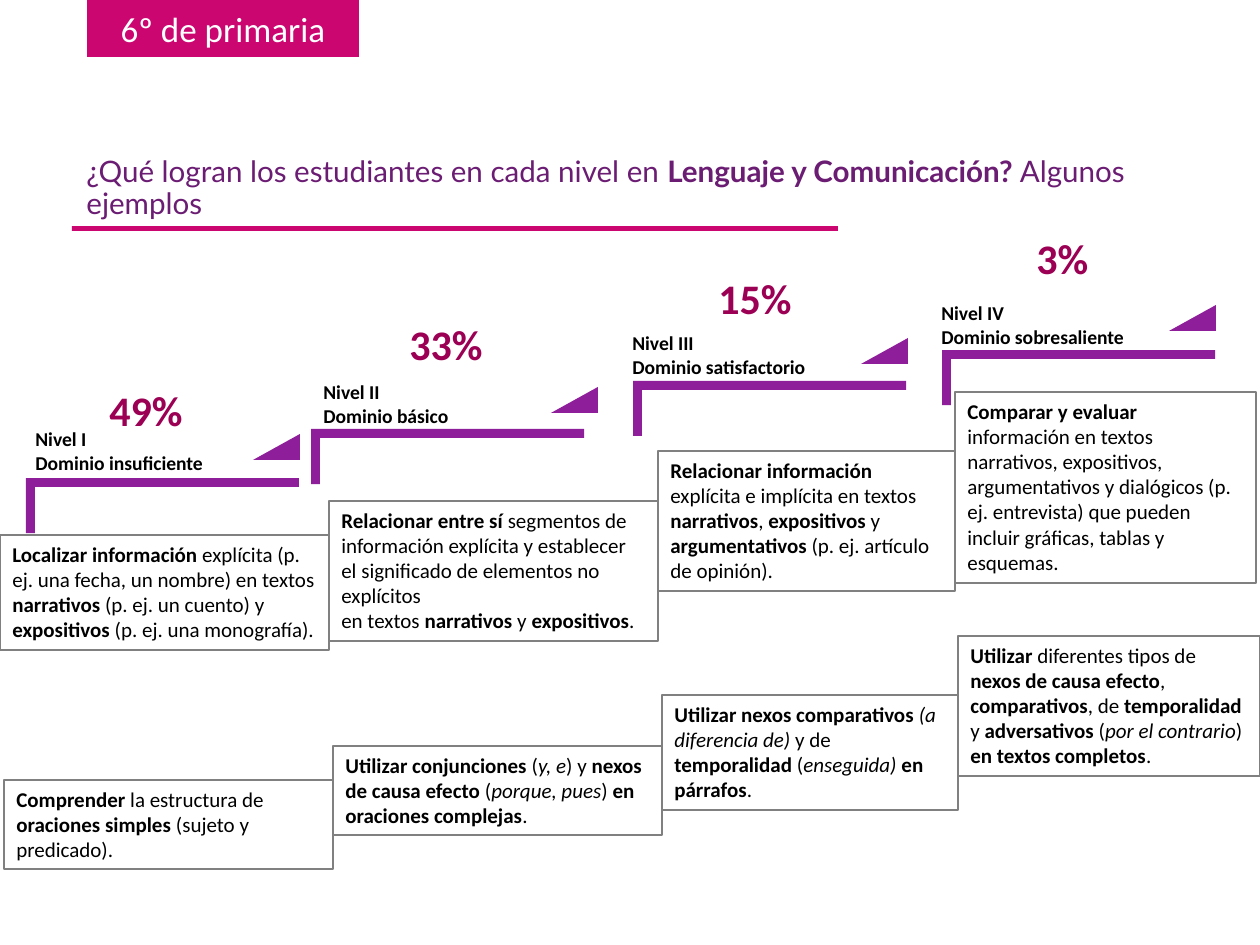
from pptx import Presentation
from pptx.dml.color import RGBColor
from pptx.enum.shapes import MSO_SHAPE
from pptx.enum.text import MSO_ANCHOR, MSO_AUTO_SIZE, PP_ALIGN
from pptx.util import Pt

PX = 914400 / 126
COLORS = {
    "magenta": "CC0671", "plum": "6B1C73", "purple": "8E1E9A",
    "wine": "9B0054", "gray": "808080", "black": "000000", "white": "FFFFFF",
}
LEVELS = [
    ("Nivel I", "Dominio insuficiente", "49%",
     (135, 369), (253, 434), (23, 421, 238, 60), (97, 378, 108, 63)),
    ("Nivel II", "Dominio básico", "33%",
     (420, 320), (551, 387), (311, 374, 205, 60), (397, 312, 108, 63)),
    ("Nivel III", "Dominio satisfactorio", "15%",
     (742, 272), (861, 338), (620, 325, 249, 60), (706, 266, 108, 63)),
    ("Nivel IV", "Dominio sobresaliente", "3%",
     (1051, 241), (1169, 305), (929, 295, 275, 60), (1024, 226, 87, 63)),
]
CARDS = [
    ((0, 535, 329, 115),
     ["*Localizar información* explícita (p. ej. una fecha, un nombre) en textos "
      "*narrativos* (p. ej. un cuento) y *expositivos* (p. ej. una monografía)."]),
    ((329, 501, 329, 140),
     ["*Relacionar entre sí* segmentos de información explícita y establecer "
      "el significado de elementos no explícitos",
      "en textos *narrativos* y *expositivos*."]),
    ((658, 451, 297, 140),
     ["*Relacionar información* explícita e implícita en textos *narrativos*, "
      "*expositivos* y *argumentativos* (p. ej. artículo de opinión)."]),
    ((955, 392, 301, 191),
     ["*Comparar y evaluar* información en textos narrativos, expositivos, "
      "argumentativos y dialógicos (p. ej. entrevista) que pueden incluir "
      "gráficas, tablas y esquemas."]),
    ((4, 780, 329, 89),
     ["*Comprender* la estructura de *oraciones simples* (sujeto y predicado)."]),
    ((333, 746, 329, 89),
     ["*Utilizar conjunciones* (_y, e_) y *nexos de causa efecto* "
      "(_porque, pues_) *en oraciones complejas*."]),
    ((662, 695, 296, 115),
     ["*Utilizar nexos comparativos* _(a diferencia de)_ y de *temporalidad* "
      "(_enseguida)_ *en párrafos*."]),
    ((958, 636, 302, 140),
     ["*Utilizar* diferentes tipos de *nexos de causa efecto*, *comparativos*, "
      "de *temporalidad* y *adversativos* (_por el contrario_) "
      "*en textos completos*."]),
]


def rgb(name):
    return RGBColor.from_string(COLORS[name])


def emu(*lengths):
    return [round(n * PX) for n in lengths]


def write(sp, lines, size, color, font="Calibri", align=PP_ALIGN.LEFT,
          wrap=True, grow=True, spacing=None):
    tf = sp.text_frame
    tf.word_wrap = wrap
    tf.auto_size = MSO_AUTO_SIZE.SHAPE_TO_FIT_TEXT if grow else MSO_AUTO_SIZE.NONE
    for i, line in enumerate(lines):
        p = tf.add_paragraph() if i else tf.paragraphs[0]
        p.alignment = align
        if spacing:
            p.line_spacing = spacing
        for b, bold_part in enumerate(line.split("*")):
            for k, part in enumerate(bold_part.split("_")):
                if part:
                    r = p.add_run()
                    r.text = part
                    r.font.name = font
                    r.font.size = Pt(size)
                    r.font.color.rgb = rgb(color)
                    r.font.bold = b % 2 == 1
                    r.font.italic = k % 2 == 1


def add_text(s, box, lines, size, color, **options):
    write(s.shapes.add_textbox(*emu(*box)), lines, size, color, **options)


def add_block(s, kind, box, color, adjustments=()):
    sp = s.shapes.add_shape(kind, *emu(*box))
    sp.shadow.inherit = False
    sp.fill.solid()
    sp.fill.fore_color.rgb = rgb(color)
    sp.line.fill.background()
    for i, value in enumerate(adjustments):
        sp.adjustments[i] = value
    return sp


def add_card(s, box, lines):
    sp = s.shapes.add_shape(MSO_SHAPE.RECTANGLE, *emu(*box))
    sp.shadow.inherit = False
    sp.fill.background()
    sp.line.color.rgb = rgb("gray")
    sp.line.width = Pt(0.75)
    sp.text_frame.vertical_anchor = MSO_ANCHOR.TOP
    write(sp, lines, 12, "black")


def add_level(s, name, domain, share, step, marker, label_box, share_box):
    corner = add_block(s, MSO_SHAPE.CORNER, (*step, 55, 273), "purple", (0.16, 0.16))
    corner.rotation = 90
    add_block(s, MSO_SHAPE.ISOSCELES_TRIANGLE, (*marker, 47, 26), "purple", (1,))
    add_text(s, label_box, [f"*{name}*", f"*{domain}*"], 11.2, "black")
    add_text(s, share_box, [f"*{share}*"], 24, "wine", wrap=False)


def main():
    prs = Presentation()
    prs.slide_width, prs.slide_height = emu(1260, 945)
    s = prs.slides.add_slide(prs.slide_layouts[6])

    banner = add_block(s, MSO_SHAPE.RECTANGLE, (87, 0, 272, 57), "magenta")
    banner.text_frame.vertical_anchor = MSO_ANCHOR.MIDDLE
    write(banner, ["6º de primaria"], 20, "white", align=PP_ALIGN.CENTER, grow=False)
    add_text(s, (74, 151, 1077, 66),
             ["¿Qué logran los estudiantes en cada nivel en "
              "*Lenguaje y Comunicación?* Algunos ejemplos"],
             16.9, "plum", font="Lato", grow=False, spacing=0.9)
    add_block(s, MSO_SHAPE.RECTANGLE, (72, 226, 766, 5), "magenta")

    for level in LEVELS:
        add_level(s, *level)
    for box, lines in CARDS:
        add_card(s, box, lines)
    prs.save("out.pptx")


if __name__ == "__main__":
    main()
